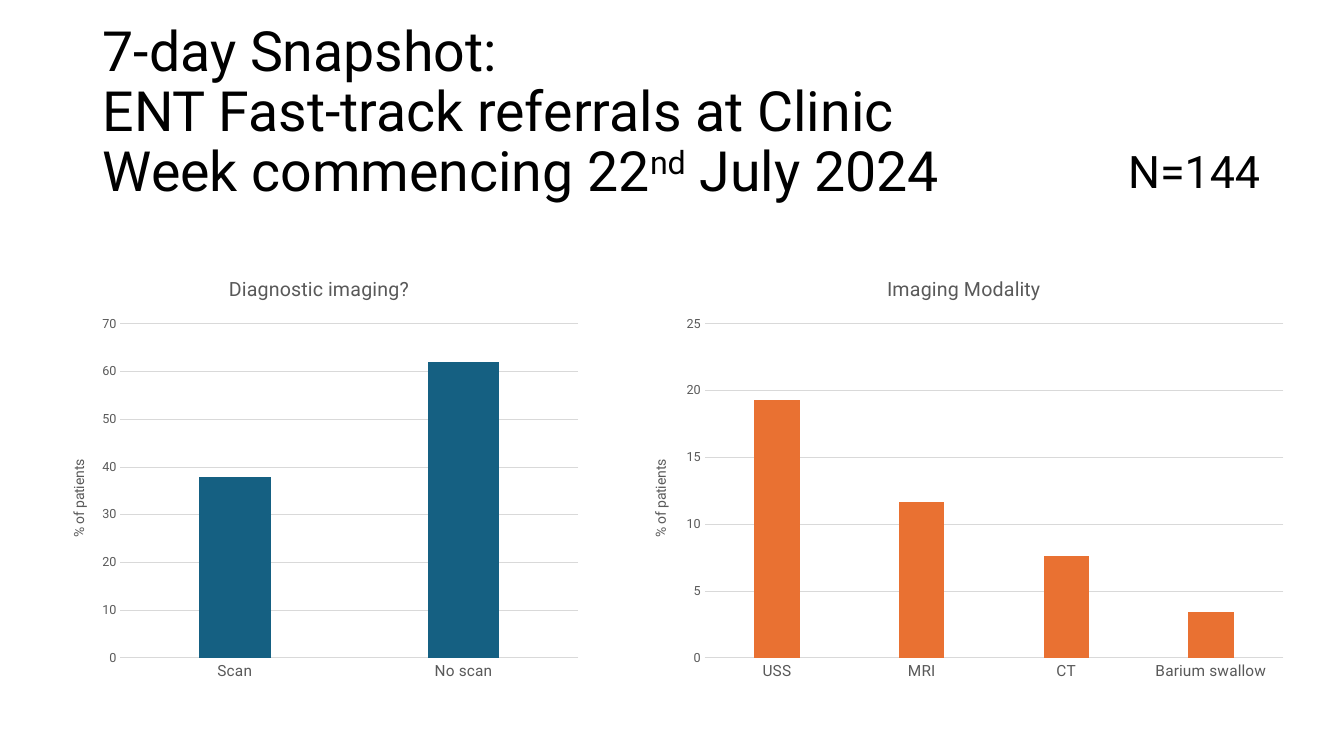
from pptx import Presentation
from pptx import util as u
from pptx.chart import data
from pptx.dml import color
from pptx.enum import chart as chart_enum, text

COLORS = {"ink": "000000", "label": "595959", "grid": "D9D9D9",
          "imaging": "156082", "modality": "E97132"}
FONT = "Roboto"
CHART_TOP, CHART_HEIGHT = 2.56, 4.28
VALUE_TITLE = "% of patients"

TITLE = {
    "box": (0.92, 0.4, 11.5, 1.45), "size": 39.6, "spacing": 0.9,
    "anchor": text.MSO_ANCHOR.MIDDLE,
    "lead": "7-day Snapshot:\vENT Fast-track referrals at Clinic\vWeek commencing 22",
    "tail": [("nd", 30000), (" July 2024", 0)],
}
SAMPLE_SIZE = {
    "box": (11.09, 1.38, 1.77, 0.64), "size": 32, "spacing": 1.0,
    "anchor": text.MSO_ANCHOR.TOP, "lead": "N=144", "tail": [],
}
CHARTS = [
    {"title": "Diagnostic imaging?", "left": 0.49, "width": 5.35,
     "color": "imaging", "maximum": 70, "step": 10,
     "values": {"Scan": 38, "No scan": 62}},
    {"title": "Imaging Modality", "left": 6.26, "width": 6.6,
     "color": "modality", "maximum": 25, "step": 5,
     "values": {"USS": 19.3, "MRI": 11.7, "CT": 7.6, "Barium swallow": 3.4}},
]


def apply(target, values):
    for name, value in values.items():
        setattr(target, name, value)


def rgb(name):
    return color.RGBColor.from_string(COLORS[name])


def style_font(font, size, color_name):
    apply(font, {"name": FONT, "size": u.Pt(size), "bold": False})
    font.color.rgb = rgb(color_name)


def style_line(line):
    line.color.rgb = rgb("grid")
    line.width = u.Pt(0.75)


def add_text(slide, item):
    frame = slide.shapes.add_textbox(*map(u.Inches, item["box"])).text_frame
    apply(frame, {"word_wrap": True, "vertical_anchor": item["anchor"]})
    paragraph = frame.paragraphs[0]
    paragraph.text = item["lead"]
    paragraph.line_spacing = item["spacing"]
    for words, baseline in item["tail"]:
        run = paragraph.add_run()
        run.text = words
        run.font._element.set("baseline", str(baseline))
    for run in paragraph.runs:
        style_font(run.font, item["size"], "ink")


def write_title(title, words, size):
    title.text_frame.text = words
    style_font(title.text_frame.paragraphs[0].runs[0].font, size, "label")


def add_column_chart(slide, item):
    chart_data = data.CategoryChartData(number_format="0")
    chart_data.categories = list(item["values"])
    chart_data.add_series("Series 1", list(item["values"].values()))
    box = map(u.Inches, (item["left"], CHART_TOP, item["width"], CHART_HEIGHT))
    chart = slide.shapes.add_chart(
        chart_enum.XL_CHART_TYPE.COLUMN_CLUSTERED, *box, chart_data).chart
    apply(chart, {"has_legend": False, "has_title": True})
    style_font(chart.font, 10, "ink")
    write_title(chart.chart_title, item["title"], 14)
    chart.chart_title.include_in_layout = False

    plot = chart.plots[0]
    apply(plot, {"gap_width": 219, "overlap": -27, "vary_by_categories": False})
    fill = plot.series[0].format.fill
    fill.solid()
    fill.fore_color.rgb = rgb(item["color"])

    category_axis, value_axis = chart.category_axis, chart.value_axis
    for axis, size in ((category_axis, 11), (value_axis, 9)):
        apply(axis, {"major_tick_mark": chart_enum.XL_TICK_MARK.NONE,
                     "minor_tick_mark": chart_enum.XL_TICK_MARK.NONE})
        style_font(axis.tick_labels.font, size, "label")
    style_line(category_axis.format.line)
    apply(value_axis, {"minimum_scale": 0, "maximum_scale": item["maximum"],
                       "major_unit": item["step"], "has_major_gridlines": True})
    value_axis.format.line.fill.background()
    style_line(value_axis.major_gridlines.format.line)
    apply(value_axis.tick_labels, {"number_format": "0",
                                   "number_format_is_linked": False})
    write_title(value_axis.axis_title, VALUE_TITLE, 10)


def main():
    presentation = Presentation()
    apply(presentation, {"slide_width": u.Inches(13.33),
                         "slide_height": u.Inches(7.5)})
    slide = presentation.slides.add_slide(presentation.slide_layouts[6])
    for item in CHARTS:
        add_column_chart(slide, item)
    for item in (TITLE, SAMPLE_SIZE):
        add_text(slide, item)
    presentation.save("out.pptx")


if __name__ == "__main__":
    main()
